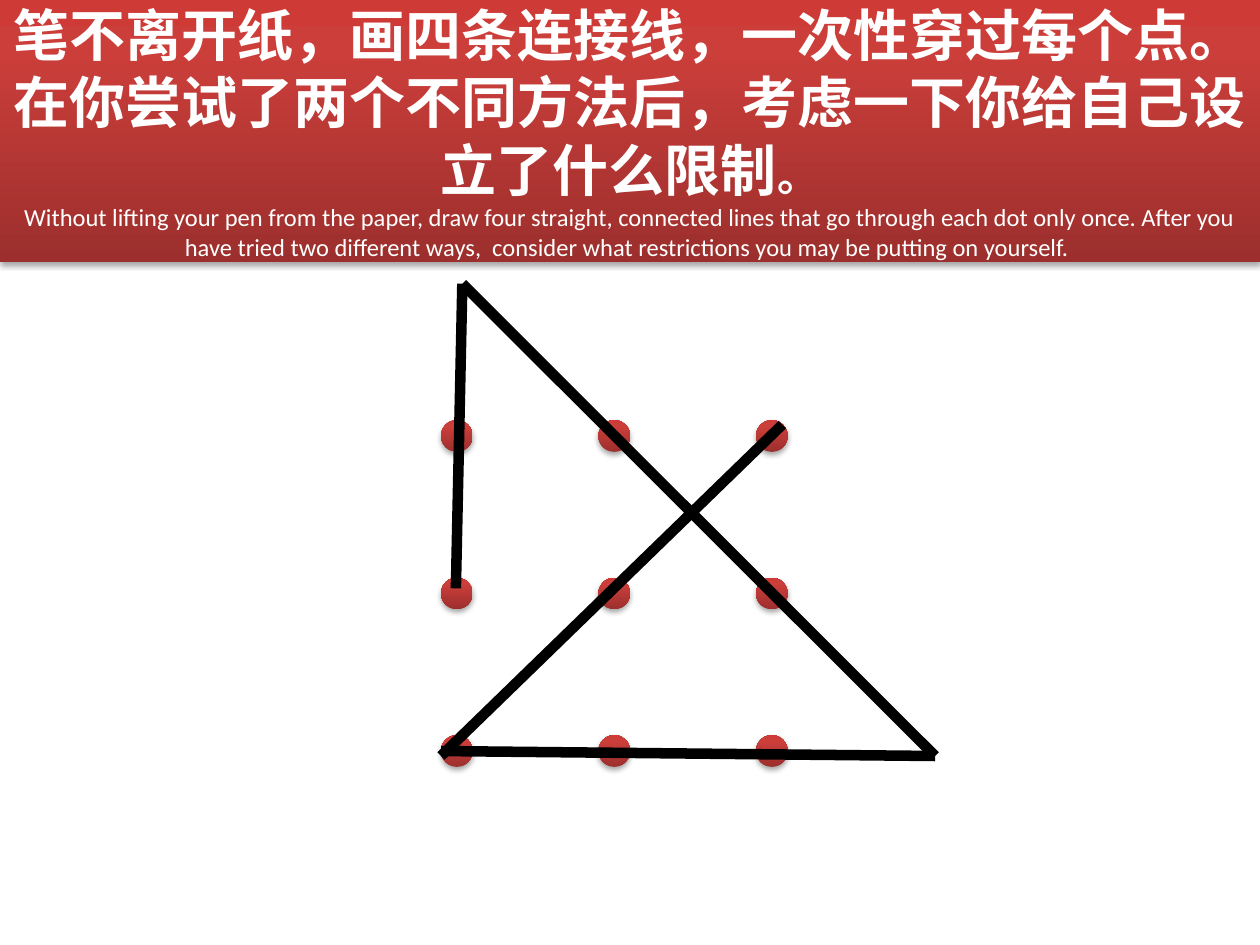
from dataclasses import dataclass

from lxml import etree
from pptx import Presentation
from pptx.dml.color import RGBColor
from pptx.enum.shapes import MSO_CONNECTOR, MSO_SHAPE
from pptx.enum.text import MSO_ANCHOR, PP_ALIGN
from pptx.oxml import parse_xml
from pptx.oxml.ns import nsdecls, qn
from pptx.shapes.autoshape import Shape
from pptx.slide import Slide
from pptx.util import Cm, Pt

RECTANGLE = MSO_SHAPE.RECTANGLE
OVAL = MSO_SHAPE.OVAL
STRAIGHT = MSO_CONNECTOR.STRAIGHT
MIDDLE = MSO_ANCHOR.MIDDLE
CENTER = PP_ALIGN.CENTER

WHITE = RGBColor(0xFF, 0xFF, 0xFF)
BLACK = RGBColor(0x00, 0x00, 0x00)
DARK_RED = RGBColor(0x9C, 0x2F, 0x2D)
RED = RGBColor(0xCB, 0x3E, 0x3A)
BRIGHT_RED = RGBColor(0xCE, 0x3B, 0x37)
GRADIENT = ((0, DARK_RED), (80, RED), (100, BRIGHT_RED))

FONT = "Calibri"
DOT_SIZE = 0.64
DOT_LEFT, DOT_TOP, DOT_PITCH = 8.89, 8.47, 3.175
DOTS_PER_SIDE = 3


@dataclass(frozen=True)
class TextPart:
    text: str
    size: int
    bold: bool
    break_after: bool = False


@dataclass(frozen=True)
class Stroke:
    """A pen stroke, with its ends in centimetres."""
    start: tuple[float, float]
    end: tuple[float, float]


TITLE_PARTS = (
    TextPart("笔不离开纸，画四条连接线，一次性穿过每个点。", 32, True, True),
    TextPart("在你尝试了两个不同方法后，考虑一下你给自己设立了什么限制", 32, True),
    TextPart("。", 24, True, True),
    TextPart(
        "Without lifting your pen from the paper, draw four straight, connected "
        "lines that go through each dot only once. After you have tried two "
        "different ways,  consider what restrictions you may be putting on yourself. ",
        14, False,
    ),
)

APEX = (9.32, 5.72)
RIGHT_CORNER = (18.85, 15.24)
STROKES = (
    Stroke((9.19, 11.86), APEX),
    Stroke(RIGHT_CORNER, APEX),
    Stroke(RIGHT_CORNER, (8.89, 15.14)),
    Stroke((15.77, 8.56), (8.89, 15.24)),
)


def add_red_shape(slide: Slide, kind: MSO_SHAPE, left: float, top: float,
                  width: float, height: float) -> Shape:
    """Add a shape with the red vertical gradient and a soft shadow below."""
    shape = slide.shapes.add_shape(kind, Cm(left), Cm(top), Cm(width), Cm(height))
    shape.line.fill.background()
    stops = "".join(
        f'<a:gs pos="{position * 1000}"><a:srgbClr val="{color}"/></a:gs>'
        for position, color in GRADIENT
    )
    properties = shape.element.spPr
    properties.find(qn("a:prstGeom")).addnext(parse_xml(
        f'<a:gradFill {nsdecls("a")} rotWithShape="1"><a:gsLst>{stops}</a:gsLst>'
        '<a:lin ang="16200000" scaled="0"/></a:gradFill>'
    ))
    properties.append(parse_xml(
        f'<a:effectLst {nsdecls("a")}>'
        f'<a:outerShdw blurRad="{Pt(3.15)}" dist="{Pt(1.8)}" dir="5400000" rotWithShape="0">'
        f'<a:srgbClr val="{BLACK}"><a:alpha val="35000"/></a:srgbClr>'
        '</a:outerShdw></a:effectLst>'
    ))
    return shape


def add_title(slide: Slide) -> None:
    banner = add_red_shape(slide, RECTANGLE, 0, 0, 25.4, 5.28)
    frame = banner.text_frame
    frame.word_wrap = True
    frame.vertical_anchor = MIDDLE
    paragraph = frame.paragraphs[0]
    paragraph.alignment = CENTER
    paragraph.font.name = FONT
    paragraph.font.color.rgb = WHITE
    for part in TITLE_PARTS:
        run = paragraph.add_run()
        run.text = part.text
        run.font.size = Pt(part.size)
        run.font.bold = part.bold
        if part.break_after:
            paragraph.add_line_break()


def add_dots(slide: Slide) -> None:
    for row in range(DOTS_PER_SIDE):
        for column in range(DOTS_PER_SIDE):
            add_red_shape(slide, OVAL, DOT_LEFT + column * DOT_PITCH,
                          DOT_TOP + row * DOT_PITCH, DOT_SIZE, DOT_SIZE)


def add_stroke(slide: Slide, stroke: Stroke) -> None:
    connector = slide.shapes.add_connector(
        STRAIGHT, *map(Cm, stroke.start), *map(Cm, stroke.end))
    connector.line.color.rgb = BLACK
    connector.line.width = Pt(6)
    etree.SubElement(connector.element.spPr, qn("a:effectLst"))


def main() -> None:
    presentation = Presentation()
    presentation.slide_width = Cm(25.4)
    presentation.slide_height = Cm(19.05)
    slide = presentation.slides.add_slide(presentation.slide_layouts[6])
    add_title(slide)
    add_dots(slide)
    for stroke in STROKES:
        add_stroke(slide, stroke)
    presentation.save("out.pptx")


if __name__ == "__main__":
    main()
